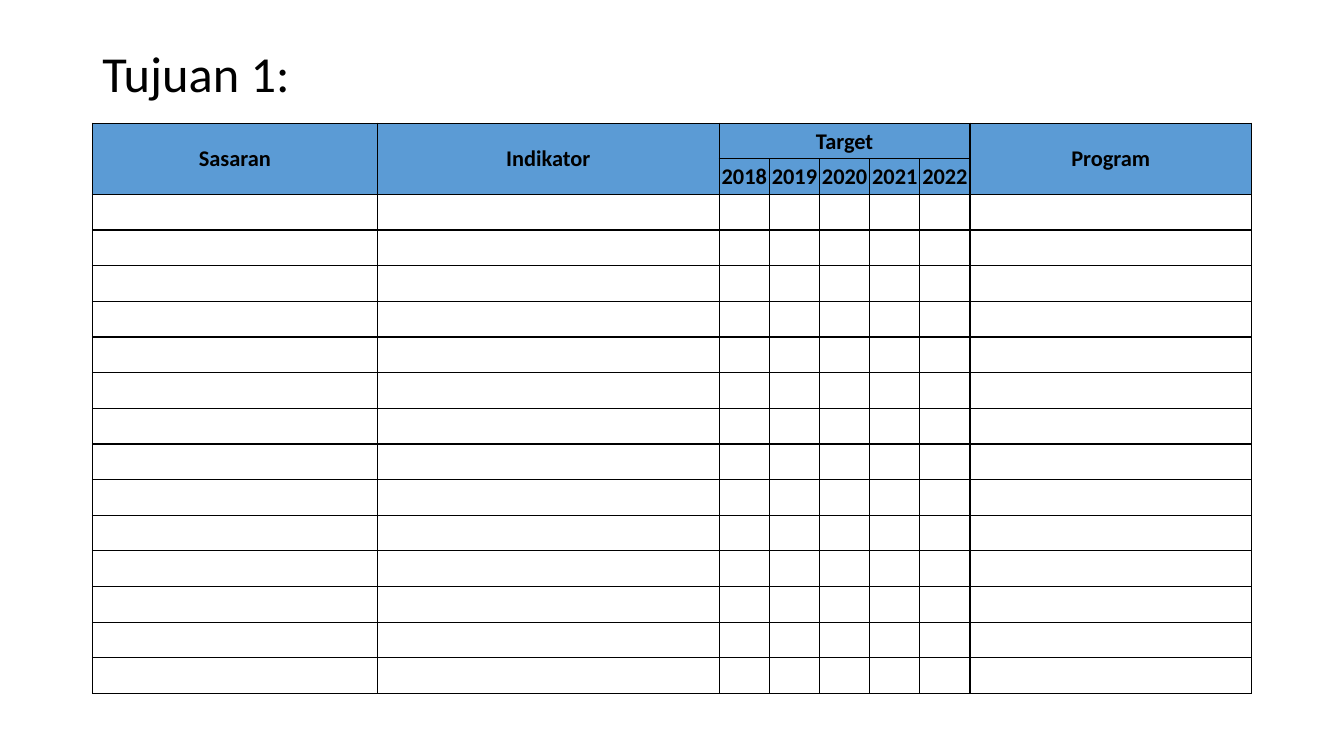
from lxml import etree
from pptx import Presentation
from pptx.dml.color import RGBColor
from pptx.enum.text import MSO_ANCHOR, PP_ALIGN
from pptx.oxml.ns import qn
from pptx.util import Pt

MIDDLE = MSO_ANCHOR.MIDDLE
CENTER = PP_ALIGN.CENTER
FONT = "Calibri"
COLORS = {"text": "000000", "border": "000000", "header": "5B9BD5"}


def set_font(p, size, bold=False):
    p.font.name = FONT
    p.font.size = Pt(size)
    p.font.bold = bold
    p.font.color.rgb = RGBColor.from_string(COLORS["text"])


def add_borders(cell):
    tcPr = cell._tc.get_or_add_tcPr()
    for side in ("lnL", "lnR", "lnT", "lnB"):
        ln = etree.SubElement(tcPr, qn(f"a:{side}"), w=str(Pt(1)))
        fill = etree.SubElement(ln, qn("a:solidFill"))
        etree.SubElement(fill, qn("a:srgbClr"), val=COLORS["border"])


prs = Presentation()
prs.slide_width, prs.slide_height = Pt(960), Pt(540)
s = prs.slides.add_slide(prs.slide_layouts[6])

title = s.shapes.add_textbox(Pt(66), Pt(28.8), Pt(828), Pt(51))
tf = title.text_frame
tf.word_wrap = True
tf.vertical_anchor = MIDDLE
p = tf.paragraphs[0]
p.text = "Tujuan 1:"
p.line_spacing = 0.9
set_font(p, 36)

col_widths = [203.5, 244.25] + [35.85] * 5 + [201]
n_rows, row_height = 16, 25.47
frame = s.shapes.add_table(n_rows, len(col_widths), Pt(66), Pt(88),
                           Pt(sum(col_widths)), Pt(n_rows * row_height))
table = frame.table
table.first_row = False
table.horz_banding = False
for col, width in zip(table.columns, col_widths):
    col.width = Pt(width)
for row in table.rows:
    row.height = Pt(row_height)

headers = {(0, 0): "Sasaran", (0, 1): "Indikator", (0, 2): "Target", (0, 7): "Program"}
for i in range(5):
    headers[1, 2 + i] = str(2018 + i)

for r in range(n_rows):
    for c in range(len(col_widths)):
        cell = table.cell(r, c)
        add_borders(cell)
        cell.vertical_anchor = MIDDLE
        cell.margin_left = cell.margin_right = cell.margin_top = Pt(0.75)
        cell.margin_bottom = Pt(0)
        if r < 2:
            cell.fill.solid()
            cell.fill.fore_color.rgb = RGBColor.from_string(COLORS["header"])
        else:
            cell.fill.background()
        p = cell.text_frame.paragraphs[0]
        p.text = headers.get((r, c), "")
        p.alignment = CENTER
        set_font(p, 16, bold=r < 2)

for c in (0, 1, 7):
    table.cell(0, c).merge(table.cell(1, c))
table.cell(0, 2).merge(table.cell(0, 6))

prs.save("out.pptx")
